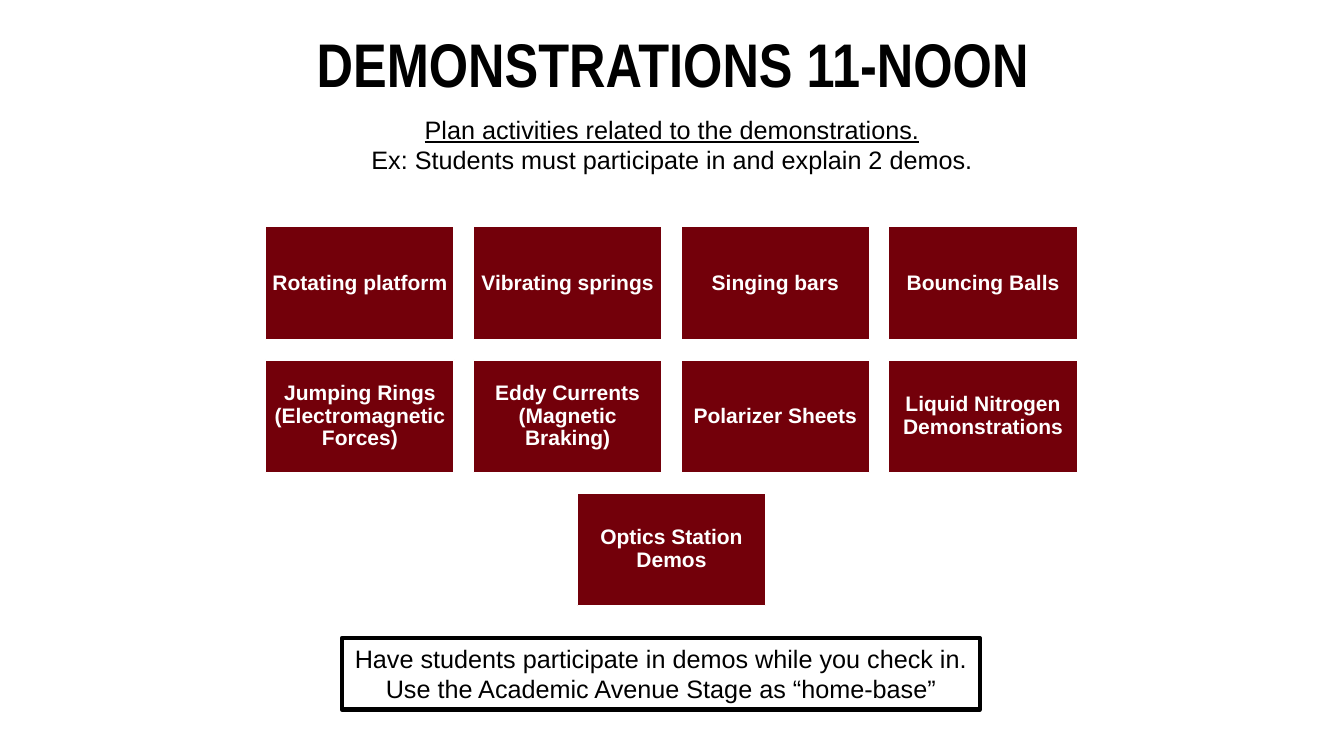
from dataclasses import dataclass

from pptx import Presentation
from pptx.dml.color import RGBColor
from pptx.enum.shapes import MSO_SHAPE
from pptx.enum.text import MSO_ANCHOR, MSO_AUTO_SIZE, PP_ALIGN
from pptx.util import Inches, Pt

MAROON = RGBColor(0x73, 0x00, 0x0A)
WHITE = RGBColor(0xFF, 0xFF, 0xFF)
BLACK = RGBColor(0x00, 0x00, 0x00)

CENTER_X = 6.66
TOP = 2.25
TILE_W, TILE_H = 1.87, 1.12
STEP_X, STEP_Y = 2.06, 1.32

DEMO_ROWS = [
    ["Rotating platform", "Vibrating springs", "Singing bars", "Bouncing Balls"],
    ["Jumping Rings (Electromagnetic Forces)", "Eddy Currents (Magnetic Braking)",
     "Polarizer Sheets", "Liquid Nitrogen Demonstrations"],
    ["Optics Station Demos"],
]


@dataclass
class Tile:
    text: str
    left: float
    top: float


def write(tf, *lines, size=18, font="Arial", color=BLACK, bold=False,
          spacing=1.0, inset=None, anchor=MSO_ANCHOR.TOP, wrap=True):
    tf.auto_size = MSO_AUTO_SIZE.NONE
    tf.word_wrap = wrap
    tf.vertical_anchor = anchor
    if inset is not None:
        tf.margin_left = tf.margin_right = Inches(inset)
        tf.margin_top = tf.margin_bottom = Inches(inset)
    for i, line in enumerate(lines):
        p = tf.paragraphs[0] if i == 0 else tf.add_paragraph()
        p.alignment = PP_ALIGN.CENTER
        p.line_spacing = spacing
        r = p.add_run()
        r.text = line
        r.font.name = font
        r.font.size = Pt(size)
        r.font.bold = bold
        r.font.color.rgb = color


def add_box(s, left: float, top: float, width: float, height: float,
            line: RGBColor, weight: float, fill: RGBColor | None = None):
    sp = s.shapes.add_shape(MSO_SHAPE.RECTANGLE, Inches(left), Inches(top),
                            Inches(width), Inches(height))
    sp.shadow.inherit = False
    if fill is None:
        sp.fill.background()
    else:
        sp.fill.solid()
        sp.fill.fore_color.rgb = fill
    sp.line.color.rgb = line
    sp.line.width = Pt(weight)
    return sp


def layout_tiles(rows: list[list[str]]) -> list[Tile]:
    tiles = []
    for i, row in enumerate(rows):
        left = CENTER_X - (TILE_W + (len(row) - 1) * STEP_X) / 2
        tiles += [Tile(text, left + j * STEP_X, TOP + i * STEP_Y)
                  for j, text in enumerate(row)]
    return tiles


def draw_tile(s, tile: Tile) -> None:
    sp = add_box(s, tile.left, tile.top, TILE_W, TILE_H, WHITE, 1, MAROON)
    write(sp.text_frame, tile.text, size=15, color=WHITE, bold=True,
          spacing=0.9, inset=0.06, anchor=MSO_ANCHOR.MIDDLE)


def main() -> None:
    prs = Presentation()
    prs.slide_width, prs.slide_height = Inches(13.33), Inches(7.5)
    s = prs.slides.add_slide(prs.slide_layouts[5])

    title = s.shapes.title
    title.left, title.top = Inches(1.74), Inches(0.13)
    title.width, title.height = Inches(9.87), Inches(1.08)
    write(title.text_frame, "DEMONSTRATIONS 11-NOON", size=44, font="Arial Narrow",
          bold=True, spacing=0.9, anchor=MSO_ANCHOR.MIDDLE)

    for tile in layout_tiles(DEMO_ROWS):
        draw_tile(s, tile)

    plan = s.shapes.add_textbox(Inches(1.73), Inches(1.08), Inches(9.87), Inches(0.71))
    write(plan.text_frame, "Plan activities related to the demonstrations.",
          "Ex: Students must participate in and explain 2 demos.")
    plan.text_frame.paragraphs[0].runs[0].font.underline = True

    note = add_box(s, 3.39, 6.33, 6.33, 0.71, BLACK, 3)
    write(note.text_frame, "Have students participate in demos while you check in.",
          "Use the Academic Avenue Stage as “home-base”", wrap=False)

    prs.save("out.pptx")


if __name__ == "__main__":
    main()
